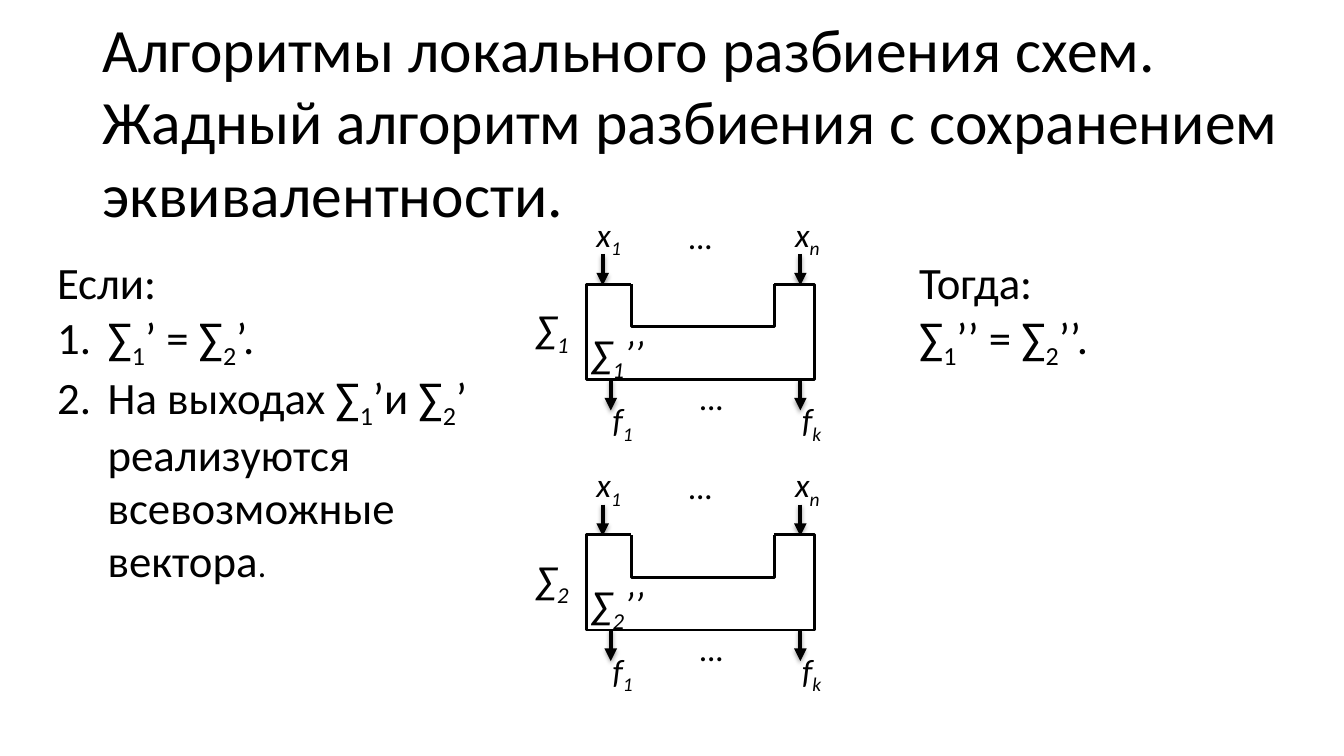
from dataclasses import dataclass

import lxml.etree
import pptx
import pptx.dml.color
import pptx.enum.shapes
import pptx.enum.text
import pptx.oxml
import pptx.oxml.ns
import pptx.util

Pt = pptx.util.Pt
RGB = pptx.dml.color.RGBColor
ALIGN = pptx.enum.text.PP_ALIGN
ANCHOR = pptx.enum.text.MSO_ANCHOR
DRAWING = pptx.oxml.ns.nsdecls("a")

ARROW_SHADOW = (
    f'<a:effectLst {DRAWING}><a:outerShdw blurRad="39370" dist="22860" dir="5400000" rotWithShape="0">'
    '<a:srgbClr val="000000"><a:alpha val="35000"/></a:srgbClr></a:outerShdw></a:effectLst>'
)


@dataclass(frozen=True)
class Theme:
    font: str = "Calibri"
    ink: RGB = RGB(0, 0, 0)
    paper: RGB = RGB(255, 255, 255)
    title: float = 44
    body: float = 32
    symbol: float = 28
    label: float = 24
    outline: float = 2
    arrow: float = 3


def apply(target, values):
    for name, value in values.items():
        setattr(target, name, value)


class SlideBuilder:
    def __init__(self, slide, theme):
        self.slide = slide
        self.theme = theme

    def add_runs(self, paragraph, text, size, italic=False):
        """Add runs to a paragraph; parts between bars are subscripts."""
        for index, part in enumerate(text.split("|")):
            if not part:
                continue
            run = paragraph.add_run()
            run.text = part
            apply(run.font, {"name": self.theme.font, "size": Pt(size), "italic": italic})
            run.font.color.rgb = self.theme.ink
            if index % 2:
                run._r.get_or_add_rPr().set("baseline", "-25000")

    def title(self, text, left, top, width, height):
        shape = self.slide.shapes.title
        apply(shape, {"left": Pt(left), "top": Pt(top), "width": Pt(width), "height": Pt(height)})
        apply(shape.text_frame, {
            "word_wrap": True,
            "auto_size": pptx.enum.text.MSO_AUTO_SIZE.NONE,
            "vertical_anchor": ANCHOR.BOTTOM,
            "margin_bottom": Pt(29.5),
        })
        paragraph = shape.text_frame.paragraphs[0]
        apply(paragraph, {"alignment": ALIGN.LEFT, "line_spacing": 0.98})
        self.add_runs(paragraph, text, self.theme.title)

    def text_box(self, left, top, width, height):
        shape = self.slide.shapes.add_textbox(Pt(left), Pt(top), Pt(width), Pt(height))
        apply(shape.text_frame, {"word_wrap": True, "vertical_anchor": ANCHOR.TOP, "margin_right": 0})
        return shape.text_frame

    def label(self, text, left, top, size, width=45.4):
        frame = self.text_box(left, top, width, size * 1.6)
        self.add_runs(frame.paragraphs[0], text, size, italic=True)

    def statement(self, heading, lines, left, numbered=False):
        frame = self.text_box(left, 180, 364, 261)
        frame.margin_right = Pt(7.2)
        self.add_runs(frame.paragraphs[0], heading, self.theme.body)
        for line in lines:
            paragraph = frame.add_paragraph()
            self.add_runs(paragraph, line, self.theme.body)
            if numbered:
                self.number(paragraph)
        for paragraph in frame.paragraphs:
            paragraph.line_spacing = 0.98
        return frame

    def number(self, paragraph):
        properties = paragraph._p.get_or_add_pPr()
        properties.set("marL", str(Pt(36)))
        properties.set("indent", str(-Pt(36)))
        numbering = lxml.etree.SubElement(properties, pptx.oxml.ns.qn("a:buAutoNum"))
        numbering.set("type", "arabicPeriod")

    def arrow(self, x, top, length=22.5):
        connector = self.slide.shapes.add_connector(
            pptx.enum.shapes.MSO_CONNECTOR.STRAIGHT, Pt(x), Pt(top), Pt(x), Pt(top + length))
        connector.line.color.rgb = self.theme.ink
        connector.line.width = Pt(self.theme.arrow)
        line = connector.line._get_or_add_ln()
        lxml.etree.SubElement(line, pptx.oxml.ns.qn("a:tailEnd")).set("type", "triangle")
        connector._element.spPr.append(pptx.oxml.parse_xml(ARROW_SHADOW))

    def outline(self, points):
        start, *rest = [(Pt(x), Pt(y)) for x, y in points]
        builder = self.slide.shapes.build_freeform(*start)
        builder.add_line_segments(rest, close=False)
        shape = builder.convert_to_shape()
        shape.shadow.inherit = False
        shape.fill.solid()
        shape.fill.fore_color.rgb = self.theme.paper
        shape.line.color.rgb = self.theme.ink
        shape.line.width = Pt(self.theme.outline)

    def circuit(self, number, top):
        """Draw a notched circuit with inputs and outputs; top is its upper edge."""
        theme = self.theme
        left, notch_left, notch_right, right = 419, 451, 553.2, 581.8
        notch_bottom, bottom = top + 30.5, top + 68

        for x in (430.5, 571.7):
            self.arrow(x, top - 21.6)
        for x in (436.3, 571.7):
            self.arrow(x, bottom - 0.3)
        self.outline([(notch_right, top), (right, top), (right, bottom),
                      (left, bottom), (left, top), (notch_left, top)])
        self.outline([(notch_right, top), (notch_right, notch_bottom),
                      (notch_left, notch_bottom), (notch_left, top)])

        for text, x, y in (
            ("x|1|", 419, top - 54), ("…", 485.3, top - 52.5), ("x|n|", 560.9, top - 54),
            ("f|1|", 430.6, bottom + 10.5), ("…", 493.2, bottom - 5.3), ("f|k|", 565.9, bottom + 10.5),
        ):
            self.label(text, x, y, theme.label)
        self.label(f"∑|{number}|", 375.8, top + 10.8, theme.symbol)
        self.label(f"∑|{number}|’’", 415.4, top + 28.9, theme.symbol, width=53.3)


def main():
    presentation = pptx.Presentation()
    apply(presentation, {"slide_width": Pt(960), "slide_height": Pt(540)})
    slide = presentation.slides.add_slide(presentation.slide_layouts[5])
    theme = Theme()
    builder = SlideBuilder(slide, theme)

    builder.title("Алгоритмы локального разбиения схем. Жадный алгоритм разбиения "
                  "с сохранением эквивалентности.", 66.2, 28.8, 877.7, 166.3)
    for number in (1, 2):
        builder.circuit(number, 203 + 179 * (number - 1))

    conditions = builder.statement(
        "Если:",
        ["∑|1|’ = ∑|2|’.", "На выходах ∑|1|’и ∑|2|’ реализуются всевозможные вектора"],
        33.8, numbered=True)
    builder.add_runs(conditions.paragraphs[-1], ".", theme.label)
    builder.statement("Тогда:", ["∑|1|’’ = ∑|2|’’."], 649.4)

    presentation.save("out.pptx")


if __name__ == "__main__":
    main()
